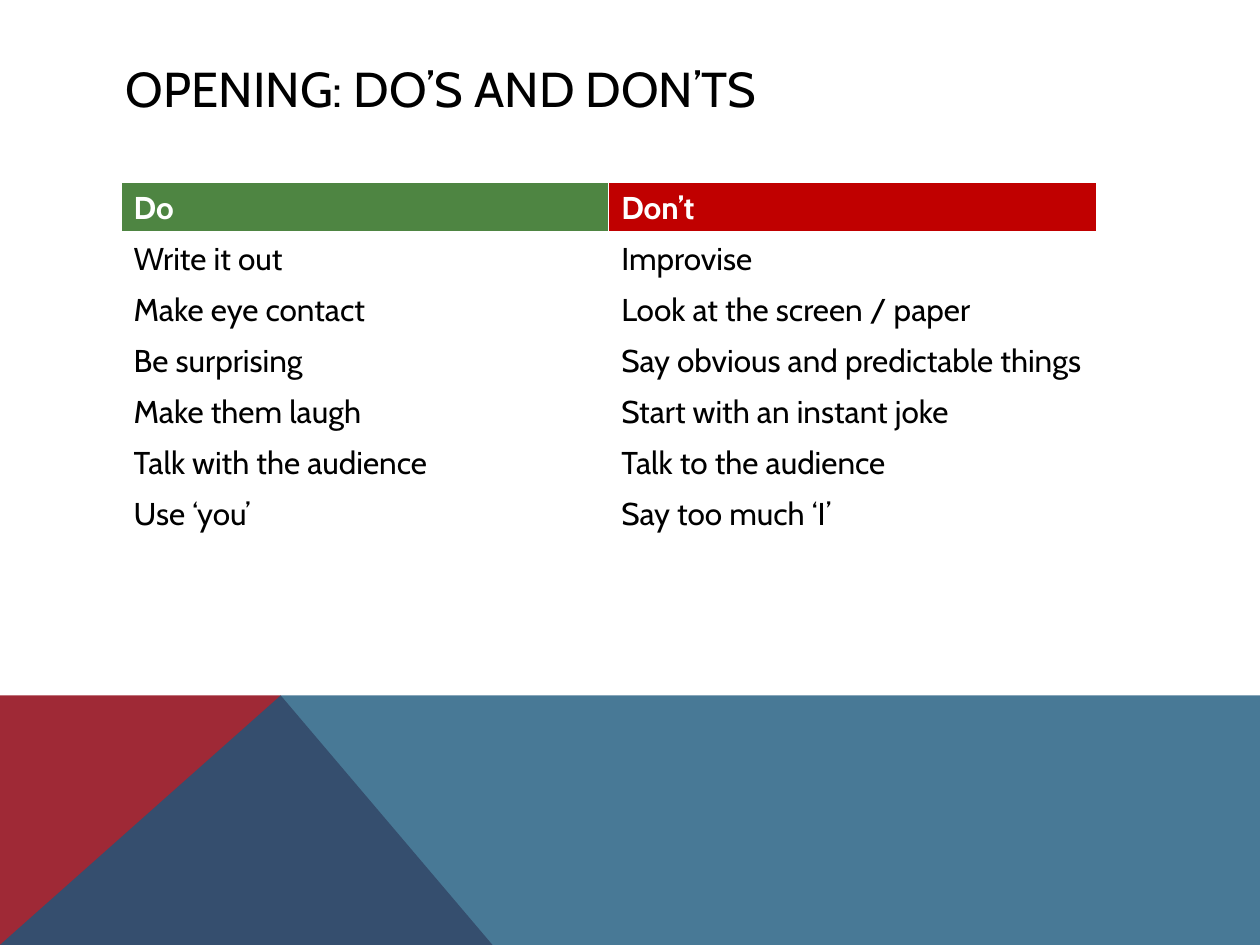
from lxml.etree import SubElement
from pptx import Presentation
from pptx.dml.color import RGBColor
from pptx.enum.text import MSO_ANCHOR
from pptx.oxml.ns import qn
from pptx.util import Cm, Pt

COLORS = {
    "white": "FFFFFF",
    "black": "000000",
    "red": "9F2936",
    "blue": "1B587C",
    "do": "4E8542",
    "dont": "C00000",
}
FONT = "Cabin"
ROWS = [
    ("Do", "Don’t"),
    ("Write it out", "Improvise"),
    ("Make eye contact", "Look at the screen / paper"),
    ("Be surprising", "Say obvious and predictable things"),
    ("Make them laugh", "Start with an instant joke"),
    ("Talk with the audience", "Talk to the audience"),
    ("Use ‘you’", "Say too much ‘I’"),
    ("", ""),
]


def write_text(text_frame, text, size=18, color="black", bold=False):
    """Write one formatted paragraph into a text frame."""
    paragraph = text_frame.paragraphs[0]
    paragraph.font.size = Pt(size)
    if text:
        run = paragraph.add_run()
        run.text = text
        run.font.name = FONT
        run.font.size = Pt(size)
        run.font.bold = bold
        run.font.color.rgb = RGBColor.from_string(COLORS[color])


def fill_solid(fill, color):
    """Give a shape or cell fill one colour from the palette."""
    fill.solid()
    fill.fore_color.rgb = RGBColor.from_string(COLORS[color])


def add_polygon(slide, points, color, opacity=100):
    """Draw a closed, unlined polygon."""
    builder = slide.shapes.build_freeform(*points[0])
    builder.add_line_segments(points[1:], close=True)
    shape = builder.convert_to_shape()
    shape.shadow.inherit = False
    shape.line.fill.background()
    fill_solid(shape.fill, color)
    if opacity < 100:
        color_element = shape.fill._xPr.find(qn("a:solidFill"))[0]
        SubElement(color_element, qn("a:alpha"), val=str(opacity * 1000))


def add_bottom_band(slide, left, top, width, height):
    """Draw the red triangle and the translucent blue band over it."""
    right, bottom = left + width, top + height
    peak = (left + Cm(5.66), top)
    corner = (left, bottom)
    add_polygon(slide, [corner, (left, top), peak, (left + Cm(9.93), bottom)], "red")
    add_polygon(slide, [corner, peak, (right, top), (right, bottom)], "blue", opacity=80)


def add_title(slide, left, top, width, height):
    """Place the slide title."""
    text_frame = slide.shapes.add_textbox(left, top, width, height).text_frame
    text_frame.word_wrap = True
    text_frame.vertical_anchor = MSO_ANCHOR.MIDDLE
    write_text(text_frame, "OPENING: DO’S AND DON’TS", size=28)


def set_borders(cell, bottom):
    """Outline a cell in white, with its own bottom line width in points."""
    properties = cell._tc.get_or_add_tcPr()
    widths = {"a:lnL": 1, "a:lnR": 1, "a:lnT": 1, "a:lnB": bottom}
    for index, (tag, points) in enumerate(widths.items()):
        line = properties.makeelement(qn(tag), {"w": str(Pt(points))})
        solid_fill = SubElement(line, qn("a:solidFill"))
        SubElement(solid_fill, qn("a:srgbClr"), val=COLORS["white"])
        properties.insert(index, line)


def add_comparison_table(slide, left, top, width, height):
    """Place the table of do's and don'ts."""
    table = slide.shapes.add_table(len(ROWS), 2, left, top, width, height).table
    for row_index, texts in enumerate(ROWS):
        is_header = row_index == 0
        fills = ("do", "dont") if is_header else ("white", "white")
        for column_index, text in enumerate(texts):
            cell = table.cell(row_index, column_index)
            fill_solid(cell.fill, fills[column_index])
            set_borders(cell, bottom=3 if is_header else 1)
            color = "white" if is_header else "black"
            write_text(cell.text_frame, text, color=color, bold=is_header)


def main():
    """Build and save the slide."""
    presentation = Presentation()
    presentation.slide_width, presentation.slide_height = Cm(25.4), Cm(19.05)
    slide = presentation.slides.add_slide(presentation.slide_layouts[6])
    add_bottom_band(slide, Cm(0), Cm(14.02), Cm(25.4), Cm(5.03))
    add_title(slide, Cm(2.29), Cm(1.02), Cm(20.88), Cm(1.52))
    add_comparison_table(slide, Cm(2.44), Cm(3.68), Cm(19.66), Cm(8.24))
    presentation.save("out.pptx")


if __name__ == "__main__":
    main()
